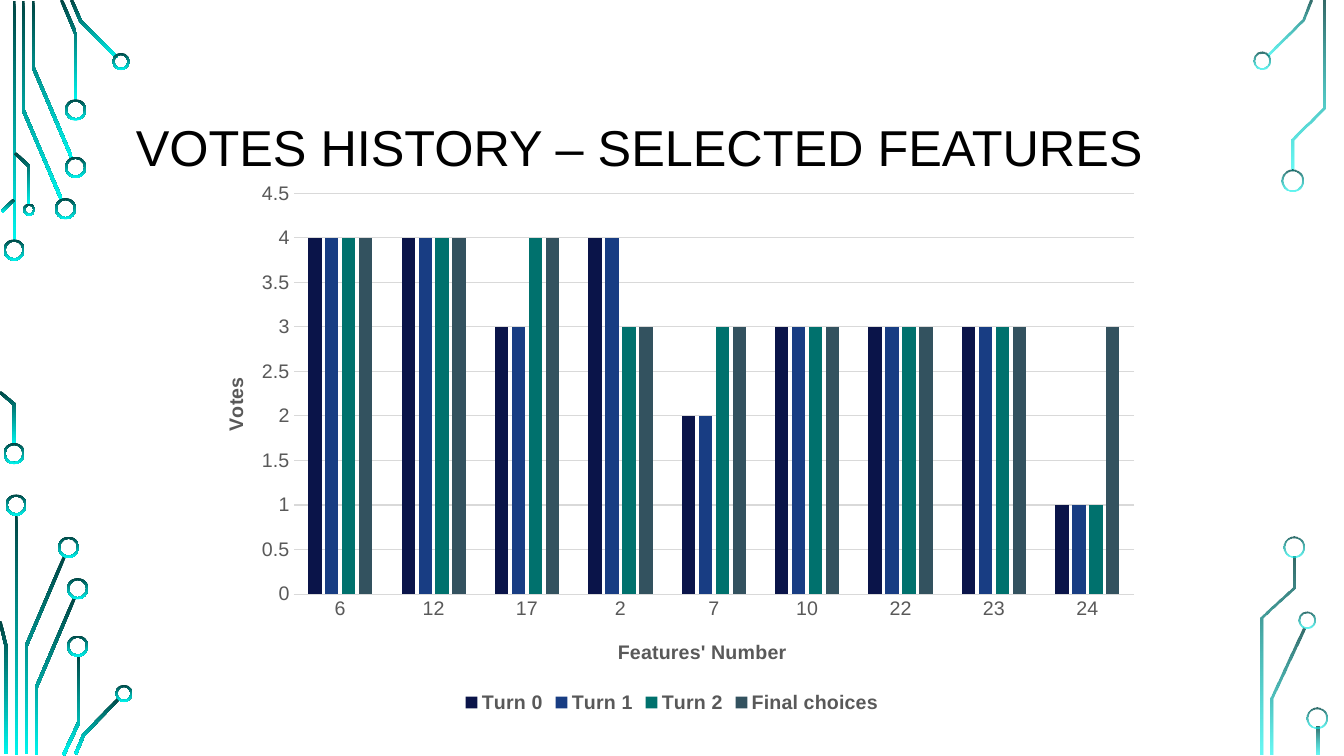
from math import hypot

from lxml import etree
from pptx import Presentation
from pptx.chart.data import CategoryChartData
from pptx.dml.color import RGBColor
from pptx.enum.chart import XL_CHART_TYPE as ChartType
from pptx.enum.chart import XL_LEGEND_POSITION as LegendPosition
from pptx.enum.chart import XL_TICK_MARK as TickMark
from pptx.enum.shapes import MSO_SHAPE as Shape
from pptx.enum.text import MSO_ANCHOR as Anchor
from pptx.oxml.ns import qn
from pptx.util import Inches, Pt

TITLE = "VOTES HISTORY – SELECTED FEATURES"
FEATURES = ["6", "12", "17", "2", "7", "10", "22", "23", "24"]
BLACK = RGBColor(0x00, 0x00, 0x00)
GRAY = RGBColor(0x59, 0x59, 0x59)
GRID = RGBColor(0xD9, 0xD9, 0xD9)
DARK_TEAL = RGBColor(0x00, 0x45, 0x43)
BRIGHT_TEAL = RGBColor(0x00, 0xF5, 0xEE)
SERIES = [
    ("Turn 0", (4, 4, 3, 4, 2, 3, 3, 3, 1), RGBColor(0x0A, 0x14, 0x49)),
    ("Turn 1", (4, 4, 3, 4, 2, 3, 3, 3, 1), RGBColor(0x18, 0x3D, 0x83)),
    ("Turn 2", (4, 4, 4, 3, 3, 3, 3, 3, 1), RGBColor(0x00, 0x71, 0x6D)),
    ("Final choices", (4, 4, 4, 3, 3, 3, 3, 3, 3), RGBColor(0x33, 0x52, 0x5F)),
]
FONT = "Arial"

# Circuit decoration, in inches: traces are centre lines, rings are (x, y, diameter)
TRACE_WIDTH = 0.03
RING_WIDTH = 0.02
LEFT_TRACES = [
    [(0.14, 0.01), (0.14, 2.39)],
    [(0.61, 1.98), (0.23, 1.09), (0.23, 0.01)],
    [(0.71, 1.56), (0.33, 0.67), (0.33, 0.01)],
    [(0.75, 1.0), (0.75, 0.33), (0.61, 0)],
    [(1.16, 0.57), (0.8, 0.21), (0.71, 0)],
    [(0.02, 2.1), (0.14, 1.98)],
    [(0.14, 4.41), (0.14, 4.01), (0, 3.89)],
    [(0.29, 2.03), (0.29, 1.65), (0.15, 1.52)],
    [(0.16, 5.1), (0.16, 7.49)],
    [(0.26, 7.48), (0.26, 6.41), (0.64, 5.52)],
    [(0.06, 7.48), (0.06, 6.41), (0, 6.16)],
    [(0.36, 7.49), (0.36, 6.82), (0.74, 5.93)],
    [(0.63, 7.49), (0.78, 7.17), (0.78, 6.5)],
    [(0.75, 7.48), (0.83, 7.29), (1.18, 6.93)],
]
LEFT_RINGS = [
    (0.14, 2.48, 0.21), (0.14, 4.5, 0.21), (0.65, 2.07, 0.21),
    (0.75, 1.66, 0.21), (0.75, 1.09, 0.21), (1.2, 0.61, 0.17),
    (0.29, 2.08, 0.12), (0.16, 5.01, 0.21), (0.68, 5.43, 0.21),
    (0.77, 5.84, 0.21), (0.77, 6.41, 0.21), (1.23, 6.88, 0.17),
]
RIGHT_TRACES = [
    [(12.57, 0.55), (12.92, 0.2), (13.0, 0)],
    [(12.62, 7.49), (12.62, 6.93), (12.93, 6.23)],
    [(12.82, 1.69), (12.82, 1.38), (13.13, 1.07), (13.13, 0.01)],
    [(12.52, 7.49), (12.52, 6.13), (12.83, 5.83), (12.83, 5.52)],
    [(13.07, 7.21), (13.07, 7.49)],
]
RIGHT_RINGS = [
    (12.52, 0.6, 0.17), (12.82, 1.79, 0.21), (12.96, 6.15, 0.17),
    (12.83, 5.43, 0.21), (13.06, 7.12, 0.21),
]
CIRCUITS = [
    (LEFT_TRACES, LEFT_RINGS, (100, 100)),
    (RIGHT_TRACES, RIGHT_RINGS, (80, 60)),
]


def paint(shape, opacities):
    """Fill with the downward teal gradient, without outline or shadow."""
    shape.shadow.inherit = False
    shape.line.fill.background()
    shape.fill.gradient()
    shape.fill.gradient_angle = 270
    for stop, color in zip(shape.fill.gradient_stops, (DARK_TEAL, BRIGHT_TEAL)):
        stop.color.rgb = color
    for color, opacity in zip(shape._element.iter(qn("a:srgbClr")), opacities):
        if opacity < 100:
            etree.SubElement(color, qn("a:alpha"), val=str(opacity * 1000))


def trace_outline(points):
    """Widen a centre line into a closed band with mitred corners."""
    normals = []
    for (x1, y1), (x2, y2) in zip(points, points[1:]):
        length = hypot(x2 - x1, y2 - y1)
        normals.append(((y1 - y2) / length, (x2 - x1) / length))
    near, far = [], []
    corners = zip(points, normals[:1] + normals, normals + normals[-1:])
    for (x, y), (ax, ay), (bx, by) in corners:
        scale = TRACE_WIDTH / 2 / (1 + ax * bx + ay * by)
        dx, dy = (ax + bx) * scale, (ay + by) * scale
        near.append((Inches(x + dx), Inches(y + dy)))
        far.append((Inches(x - dx), Inches(y - dy)))
    return near + far[::-1]


def draw_circuit(slide, traces, rings, opacities):
    for points in traces:
        start, *others = trace_outline(points)
        builder = slide.shapes.build_freeform(*start)
        builder.add_line_segments(others, close=True)
        paint(builder.convert_to_shape(), opacities)
    for x, y, size in rings:
        ring = slide.shapes.add_shape(
            Shape.DONUT, Inches(x - size / 2), Inches(y - size / 2),
            Inches(size), Inches(size))
        ring.adjustments[0] = RING_WIDTH / size
        paint(ring, opacities)


def set_font(font, size, color, bold=False):
    font.name, font.size, font.bold = FONT, Pt(size), bold
    font.color.rgb = color


def place(element, index, **fractions):
    """Give a chart part a fixed place, in fractions of the chart."""
    for old in element.findall(qn("c:layout")):
        element.remove(old)
    layout = etree.Element(qn("c:layout"))
    manual = etree.SubElement(layout, qn("c:manualLayout"))
    if "w" in fractions:
        etree.SubElement(manual, qn("c:layoutTarget"), val="inner")
    for mode in ("xMode", "yMode"):
        etree.SubElement(manual, qn("c:" + mode), val="edge")
    for name, value in fractions.items():
        etree.SubElement(manual, qn("c:" + name), val=str(value))
    element.insert(index, layout)


def style_axis(axis, title, rotation, x, y):
    axis.major_tick_mark = axis.minor_tick_mark = TickMark.NONE
    set_font(axis.tick_labels.font, 14, GRAY)
    frame = axis.axis_title.text_frame
    frame.text = title
    set_font(frame.paragraphs[0].font, 14, GRAY, True)
    frame._txBody.bodyPr.set("rot", str(rotation * 60000))
    frame._txBody.bodyPr.set("vert", "horz")
    place(axis.axis_title._element, 1, x=x, y=y)


def add_votes_chart(slide):
    data = CategoryChartData()
    data.categories = FEATURES
    for name, votes, _ in SERIES:
        data.add_series(name, votes)
    chart = slide.shapes.add_chart(
        ChartType.COLUMN_CLUSTERED, Inches(1.89), Inches(1.7),
        Inches(9.55), Inches(5.42), data).chart
    set_font(chart.font, 10, BLACK)
    chart.has_title = False
    chart.has_legend = True
    chart.legend.position = LegendPosition.BOTTOM
    chart.legend.include_in_layout = False
    set_font(chart.legend.font, 14, GRAY, True)

    plot = chart.plots[0]
    plot.gap_width, plot.overlap, plot.vary_by_categories = 219, -27, False
    for series, (_, _, color) in zip(plot.series, SERIES):
        series.format.fill.solid()
        series.format.fill.fore_color.rgb = color
    place(chart._chartSpace.chart.plotArea, 0, x=0.107, y=0.04, w=0.873, h=0.734)

    style_axis(chart.category_axis, "Features' Number", 0, 0.44, 0.85)
    style_axis(chart.value_axis, "Votes", -90, 0.03, 0.37)
    values = chart.value_axis
    values.minimum_scale, values.maximum_scale, values.major_unit = 0, 4.5, 0.5
    values.format.line.fill.background()
    for line in (chart.category_axis.format.line, values.major_gridlines.format.line):
        line.color.rgb = GRID
        line.width = Pt(0.75)


def main():
    presentation = Presentation()
    presentation.slide_width, presentation.slide_height = Inches(13.33), Inches(7.5)
    slide = presentation.slides.add_slide(presentation.slide_layouts[6])
    for circuit in CIRCUITS:
        draw_circuit(slide, *circuit)

    title = slide.shapes.add_textbox(
        Inches(1.25), Inches(0.68), Inches(10.83), Inches(1.62)).text_frame
    title.word_wrap = True
    title.vertical_anchor = Anchor.MIDDLE
    title.text = TITLE
    title.paragraphs[0].line_spacing = 0.9
    set_font(title.paragraphs[0].font, 36, BLACK)

    add_votes_chart(slide)
    presentation.save("out.pptx")


if __name__ == "__main__":
    main()
